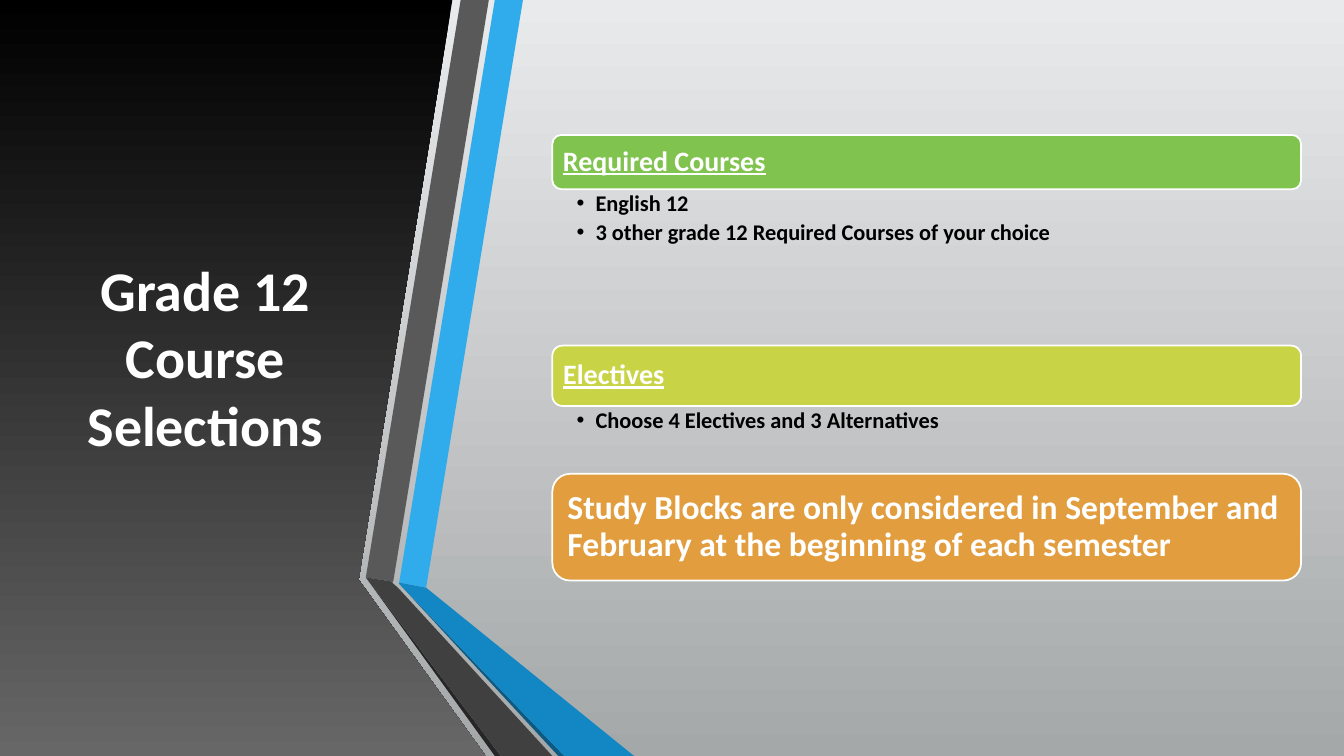
from pptx import Presentation
from pptx.dml.color import RGBColor
from pptx.enum.shapes import MSO_SHAPE
from pptx.enum.text import MSO_ANCHOR, PP_ALIGN
from pptx.oxml.ns import qn
from pptx.util import Cm, Pt
from lxml.etree import SubElement

WIDE, HIGH = 33.87, 19.05
TITLE = "Grade 12 Course Selections"
BACK = ("E9EAEB", "A5A8A9")
PANEL = ("000000", "676767")
EDGE = [(0, 0), (11.4, 0), (9.04, 14.61), (12.24, HIGH), (0, HIGH)]
BANDS = [
    ("30ACEC", [(10.06, 14.68), (10.74, 14.81), (13.18, 0), (12.47, 0)]),
    ("595959", [(12.32, 0), (11.61, 0), (9.22, 14.55), (9.91, 14.66)]),
    ("262626", [(9.22, 14.55), (12.47, HIGH), (12.62, HIGH)]),
    ("0C5A82", [(10.06, 14.71), (14.07, HIGH), (14.22, HIGH)]),
    ("1287C3", [(10.06, 14.68), (10.06, 14.71), (14.22, HIGH),
                (15.98, HIGH), (10.74, 14.81)]),
    ("404040", [(13.92, HIGH), (10.03, 14.81), (9.88, 14.68),
                (9.91, 14.66), (9.22, 14.55), (12.62, HIGH)]),
]
LEFT, SPAN = 13.92, 18.87
HEAD = {"size": Pt(20), "underline": True}
NOTE = {"size": Pt(24)}
ITEM = {"size": Pt(16)}
BARS = [
    ("Required Courses", "80C34F", 3.4, 1.37, 0.2, HEAD,
     ["English 12", "3 other grade 12 Required Courses of your choice"]),
    ("Electives", "C8D346", 8.71, 1.52, 0.2, HEAD,
     ["Choose 4 Electives and 3 Alternatives"]),
    ("Study Blocks are only considered in September and February "
     "at the beginning of each semester", "E29D3E", 11.94, 2.69, 0.25, NOTE, []),
]

deck = Presentation()
deck.slide_width, deck.slide_height = Cm(WIDE), Cm(HIGH)
slide = deck.slides.add_slide(deck.slide_layouts[6])
shapes = slide.shapes


def apply(thing, form):
    for name, value in form.items():
        setattr(thing, name, value)


def paint(target, tone):
    target.solid()
    target.fore_color.rgb = RGBColor.from_string(tone)


def fade(fill, tones):
    fill.gradient()
    fill.gradient_angle = 270
    for stop, tone in zip(fill.gradient_stops, tones):
        stop.color.rgb = RGBColor.from_string(tone)


def outline(points):
    dots = [(Cm(x), Cm(y)) for x, y in points]
    pen = shapes.build_freeform(*dots[0])
    pen.add_line_segments(dots[1:])
    form = pen.convert_to_shape()
    form.shadow.inherit = False
    form.line.fill.background()
    return form


def write(shape, lines, tone, font, para, pads, anchor):
    frame = shape.text_frame
    sides = ("margin_left", "margin_top", "margin_right", "margin_bottom")
    apply(frame, {"word_wrap": True, "vertical_anchor": anchor})
    apply(frame, dict(zip(sides, map(Cm, pads))))
    for i, line in enumerate(lines):
        part = frame.paragraphs[0] if i == 0 else frame.add_paragraph()
        apply(part, para)
        run = part.add_run()
        run.text = line
        apply(run.font, {"name": "Calibri", "bold": True, **font})
        paint(run.font.fill, tone)
    return frame


def bullet(frame):
    for part in frame.paragraphs:
        props = part._p.get_or_add_pPr()
        props.set("marL", str(Cm(0.48)))
        props.set("indent", str(-Cm(0.48)))
        SubElement(props, qn("a:buFont")).set("typeface", "Arial")
        SubElement(props, qn("a:buChar")).set("char", "•")


fade(slide.background.fill, BACK)
fade(outline(EDGE).fill, PANEL)
for tone, points in BANDS:
    paint(outline(points).fill, tone)

title = shapes.add_textbox(Cm(1.5), Cm(1.9), Cm(7.34), Cm(14.17))
write(title, [TITLE], "FFFFFF", {"size": Pt(40)}, {"alignment": PP_ALIGN.CENTER},
      (0.25, 0.13, 0.25, 0.13), MSO_ANCHOR.MIDDLE)

ends = [bar[2] for bar in BARS[1:]] + [HIGH]
for (text, tone, top, tall, pad, font, items), end in zip(BARS, ends):
    bar = shapes.add_shape(MSO_SHAPE.ROUNDED_RECTANGLE,
                           Cm(LEFT), Cm(top), Cm(SPAN), Cm(tall))
    bar.shadow.inherit = False
    paint(bar.fill, tone)
    paint(bar.line.fill, "FFFFFF")
    bar.line.width = Pt(1.25)
    write(bar, [text], "FFFFFF", font,
          {"alignment": PP_ALIGN.LEFT, "line_spacing": 0.9},
          [pad] * 4, MSO_ANCHOR.MIDDLE)
    if items:
        low = top + tall
        box = shapes.add_textbox(Cm(LEFT), Cm(low), Cm(SPAN), Cm(end - low))
        bullet(write(box, items, "000000", ITEM,
                     {"line_spacing": 0.9, "space_after": Pt(3.2)},
                     (0.61, 0.08, 0.41, 0.08), MSO_ANCHOR.TOP))

deck.save("out.pptx")
